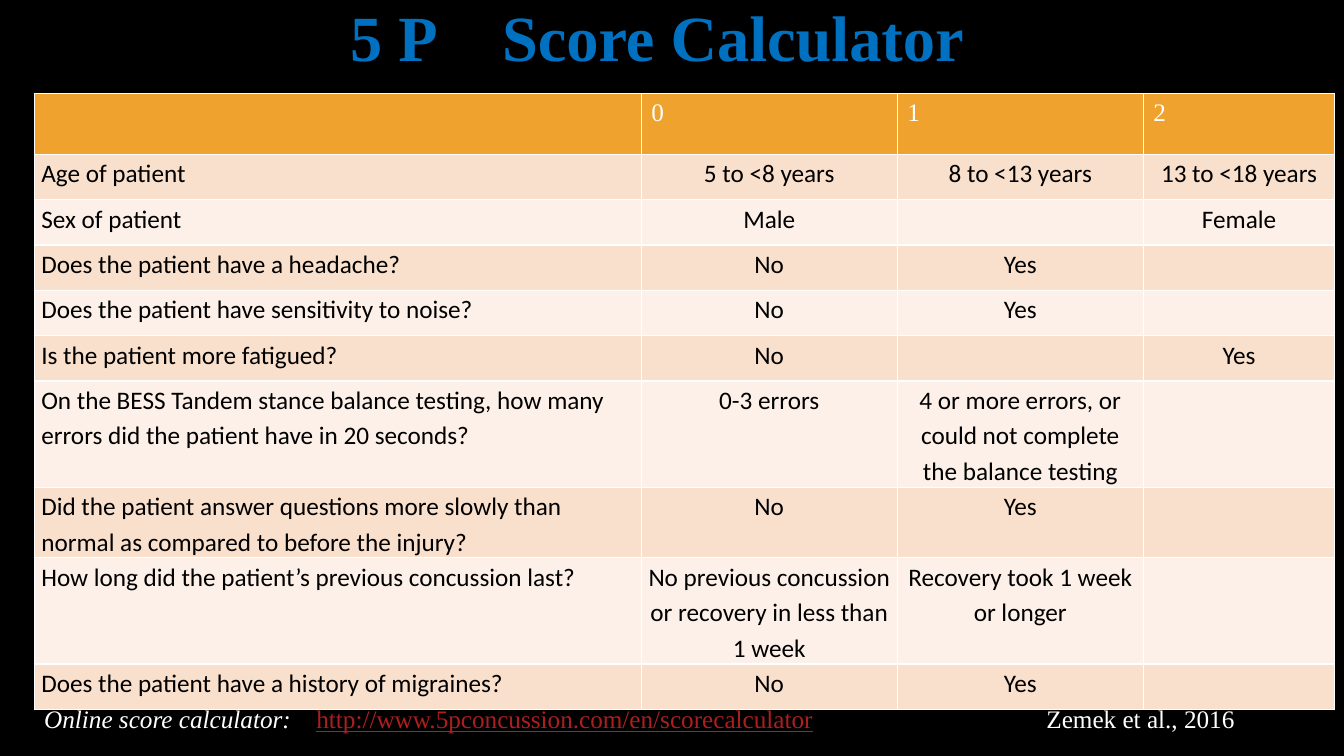
from typing import NamedTuple

from lxml.etree import SubElement
from pptx import Presentation
from pptx.dml.color import RGBColor
from pptx.enum.text import MSO_ANCHOR as Anchor, MSO_AUTO_SIZE as AutoSize, PP_ALIGN as Align
from pptx.oxml.ns import qn
from pptx.util import Inches, Pt

COLORS = {
    "background": "000000",
    "title": "0070C0",
    "header": "F0A22E",
    "odd_row": "F9E0CD",
    "even_row": "FCF0E8",
    "dark_text": "000000",
    "light_text": "FFFFFF",
    "address": "AD1F1F",
}
SERIF = "Times New Roman"
SANS = "Calibri"
COLUMN_WIDTHS = [6.02, 2.54, 2.44, 1.9]
FOOTER_TABS = [2.7, 9.94]


class ScoreRow(NamedTuple):
    question: str
    zero: str = ""
    one: str = ""
    two: str = ""
    height: float = 0.45


class FooterPart(NamedTuple):
    text: str
    color: str = "light_text"
    italic: bool = False
    underline: bool = False


ROWS = [
    ScoreRow("", "0", "1", "2", 0.6),
    ScoreRow("Age of patient", "5 to <8 years", "8 to <13 years", "13 to <18 years"),
    ScoreRow("Sex of patient", "Male", "", "Female"),
    ScoreRow("Does the patient have a headache?", "No", "Yes"),
    ScoreRow("Does the patient have sensitivity to noise?", "No", "Yes"),
    ScoreRow("Is the patient more fatigued?", "No", "", "Yes"),
    ScoreRow(
        "On the BESS Tandem stance balance testing, how many errors did the patient have in 20 seconds?",
        "0-3 errors",
        "4 or more errors, or could not complete the balance testing",
        height=1,
    ),
    ScoreRow(
        "Did the patient answer questions more slowly than normal as compared to before the injury?",
        "No",
        "Yes",
        height=0.66,
    ),
    ScoreRow(
        "How long did the patient’s previous concussion last?",
        "No previous concussion or recovery in less than 1 week",
        "Recovery took 1 week or longer",
        height=1,
    ),
    ScoreRow("Does the patient have a history of migraines?", "No", "Yes"),
]

FOOTER = [
    FooterPart("Online score calculator:\t", italic=True),
    FooterPart("http://www.5pconcussion.com/en/scorecalculator", "address", underline=True),
    FooterPart("\tZemek et al., 2016"),
]


def rgb(name: str) -> RGBColor:
    return RGBColor.from_string(COLORS[name])


def set_font(font, name: str, size: float, color: str, bold: bool = False) -> None:
    font.name = name
    font.size = Pt(size)
    font.bold = bold
    font.color.rgb = rgb(color)


def add_title(slide) -> None:
    title = slide.shapes.title
    title.left, title.top = Inches(0.84), Inches(0.16)
    title.width, title.height = Inches(11.5), Inches(0.48)
    frame = title.text_frame
    frame.auto_size = AutoSize.NONE
    frame.vertical_anchor = Anchor.MIDDLE
    paragraph = frame.paragraphs[0]
    paragraph.alignment = Align.CENTER
    paragraph.line_spacing = 0.9
    set_font(paragraph.font, SERIF, 46, "title", bold=True)
    for text, spacing in [("5 P", 0), (" ", 34.5), ("Score Calculator ", 0)]:
        run = paragraph.add_run()
        run.text = text
        if spacing:
            run.font._element.set("spc", str(int(spacing * 100)))


def fill_cell(cell, text: str, row: int, column: int) -> None:
    cell.fill.solid()
    paragraph = cell.text_frame.paragraphs[0]
    paragraph.text = text
    if row == 0:
        cell.fill.fore_color.rgb = rgb("header")
        set_font(paragraph.font, SERIF, 18, "light_text")
        return
    cell.fill.fore_color.rgb = rgb("odd_row" if row % 2 else "even_row")
    cell.margin_left = cell.margin_right = Inches(0.07)
    cell.margin_top = cell.margin_bottom = 0
    paragraph.line_spacing = 1.15
    paragraph.alignment = Align.CENTER if column else Align.LEFT
    set_font(paragraph.font, SANS, 18, "dark_text")


def add_score_table(slide) -> None:
    table = slide.shapes.add_table(
        len(ROWS), len(COLUMN_WIDTHS), Inches(0.34), Inches(0.93),
        Inches(sum(COLUMN_WIDTHS)), Inches(sum(row.height for row in ROWS)),
    ).table
    for column, width in zip(table.columns, COLUMN_WIDTHS):
        column.width = Inches(width)
    for row_index, row in enumerate(ROWS):
        table.rows[row_index].height = Inches(row.height)
        for column_index, text in enumerate(row[:4]):
            fill_cell(table.cell(row_index, column_index), text, row_index, column_index)


def add_footer(slide) -> None:
    box = slide.shapes.add_textbox(Inches(0.34), Inches(6.93), Inches(12.9), Inches(0.57))
    box.text_frame.word_wrap = True
    paragraph = box.text_frame.paragraphs[0]
    tab_list = SubElement(paragraph._p.get_or_add_pPr(), qn("a:tabLst"))
    for position in FOOTER_TABS:
        SubElement(tab_list, qn("a:tab"), pos=str(Inches(position)), algn="l")
    for part in FOOTER:
        run = paragraph.add_run()
        run.text = part.text
        set_font(run.font, SERIF, 18, part.color)
        run.font.italic = part.italic
        run.font.underline = part.underline


def main() -> None:
    presentation = Presentation()
    presentation.slide_width, presentation.slide_height = Inches(13.33), Inches(7.5)
    slide = presentation.slides.add_slide(presentation.slide_layouts[5])
    slide.background.fill.solid()
    slide.background.fill.fore_color.rgb = rgb("background")
    add_title(slide)
    add_score_table(slide)
    add_footer(slide)
    presentation.save("out.pptx")


if __name__ == "__main__":
    main()
